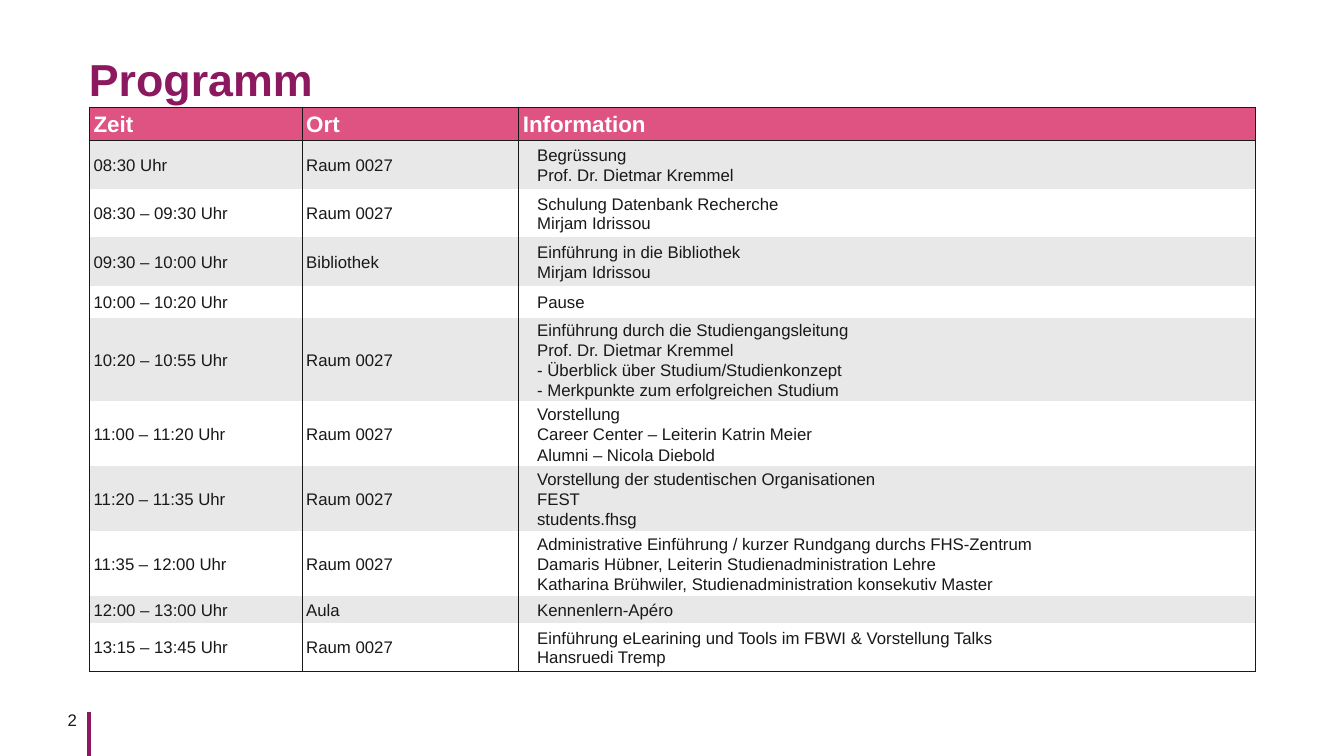
import copy
import pptx
import pptx.dml.color
import pptx.enum.shapes
import pptx.enum.text
import pptx.oxml
import pptx.oxml.ns
import pptx.util

Cm, Pt = pptx.util.Cm, pptx.util.Pt
ALIGN, ANCHOR = pptx.enum.text.PP_ALIGN, pptx.enum.text.MSO_ANCHOR
PLUM, PINK, INK, GREY, WHITE = "8C195F", "D72864", "191919", "E8E8E8", "FFFFFF"

HEADER = ("Zeit", "Ort", "Information")
COLUMNS = (5.36, 5.46, 18.57)
HEADER_HEIGHT = 0.84
HEIGHT_BY_LINES = {1: 0.69, 2: 1.22, 3: 1.63, 4: 2.11}
PROGRAMME = [
    ("08:30 Uhr", "Raum 0027", ["Begrüssung", "Prof. Dr. Dietmar Kremmel"]),
    ("08:30 – 09:30 Uhr", "Raum 0027", ["Schulung Datenbank Recherche", "Mirjam Idrissou"]),
    ("09:30 – 10:00 Uhr", "Bibliothek", ["Einführung in die Bibliothek", "Mirjam Idrissou"]),
    ("10:00 – 10:20 Uhr", "", ["Pause"]),
    ("10:20 – 10:55 Uhr", "Raum 0027", [
        "Einführung durch die Studiengangsleitung", "Prof. Dr. Dietmar Kremmel",
        "- Überblick über Studium/Studienkonzept", "- Merkpunkte zum erfolgreichen Studium"]),
    ("11:00 – 11:20 Uhr", "Raum 0027", [
        "Vorstellung", "Career Center – Leiterin Katrin Meier", "Alumni – Nicola Diebold"]),
    ("11:20 – 11:35 Uhr", "Raum 0027", [
        "Vorstellung der studentischen Organisationen", "FEST", "students.fhsg"]),
    ("11:35 – 12:00 Uhr", "Raum 0027", [
        "Administrative Einführung / kurzer Rundgang durchs FHS-Zentrum",
        "Damaris Hübner, Leiterin Studienadministration Lehre",
        "Katharina Brühwiler, Studienadministration konsekutiv Master"]),
    ("12:00 – 13:00 Uhr", "Aula", ["Kennenlern-Apéro"]),
    ("13:15 – 13:45 Uhr", "Raum 0027", [
        "Einführung eLearining und Tools im FBWI & Vorstellung Talks", "Hansruedi Tremp"]),
]


def rgb(color):
    return pptx.dml.color.RGBColor.from_string(color)


def write(tf, lines, size=12, color=INK, bold=False, align=ALIGN.LEFT, spacing=1.0, indent=0):
    p = tf.paragraphs[0]
    p.alignment, p.line_spacing = align, spacing
    if indent:
        p._p.get_or_add_pPr().set("marL", str(Cm(indent)))
    for i, line in enumerate(lines):
        if i:
            p.add_line_break()
            p._p[-1].append(copy.deepcopy(r._r.rPr))
        r = p.add_run()
        r.text = line
        r.font.name, r.font.size, r.font.bold = "Arial", Pt(size), bold
        r.font.color.rgb = rgb(color)


class Deck:
    """Holds the presentation, its current slide and the style of its elements."""

    def __init__(self, width, height):
        self.prs = pptx.Presentation()
        self.prs.slide_width, self.prs.slide_height = Cm(width), Cm(height)
        self.s = self.prs.slides.add_slide(self.prs.slide_layouts[5])

    def frame(self, sp, anchor, right=0):
        tf = sp.text_frame
        tf.word_wrap, tf.vertical_anchor = True, anchor
        tf.auto_size = pptx.enum.text.MSO_AUTO_SIZE.NONE
        tf.margin_left = tf.margin_top = tf.margin_bottom = 0
        tf.margin_right = Cm(right)
        return tf

    def title(self, text, x, y, w, h):
        sp = self.s.shapes.title
        sp.left, sp.top, sp.width, sp.height = Cm(x), Cm(y), Cm(w), Cm(h)
        write(self.frame(sp, ANCHOR.MIDDLE), [text], size=32, color=PLUM, bold=True, spacing=1.2)

    def page_number(self, text, x, y, w, h):
        sp = self.s.shapes.add_textbox(Cm(x), Cm(y), Cm(w), Cm(h))
        write(self.frame(sp, ANCHOR.TOP, right=0.3), [text], align=ALIGN.RIGHT, spacing=0.9)

    def line(self, x1, y1, x2, y2):
        sp = self.s.shapes.add_connector(
            pptx.enum.shapes.MSO_CONNECTOR.STRAIGHT, Cm(x1), Cm(y1), Cm(x2), Cm(y2))
        sp.line.color.rgb, sp.line.width = rgb(PLUM), Pt(3)
        sp._element.spPr.append(pptx.oxml.parse_xml(
            f"<a:effectLst {pptx.oxml.ns.nsdecls('a')}/>"))

    def cell(self, cell, fill, sides, alpha=None):
        cell.vertical_anchor = ANCHOR.MIDDLE
        cell.margin_left = cell.margin_right = Cm(0.1)
        cell.margin_top, cell.margin_bottom = Cm(0.03), 0
        tcPr = cell._tc.get_or_add_tcPr()
        for side in "LRTB":
            paint = (f'<a:solidFill><a:srgbClr val="{INK}"/></a:solidFill>'
                     if side in sides else "<a:noFill/>")
            tcPr.append(pptx.oxml.parse_xml(
                f'<a:ln{side} {pptx.oxml.ns.nsdecls("a")} w="{Pt(1)}">{paint}</a:ln{side}>'))
        cell.fill.solid()
        cell.fill.fore_color.rgb = rgb(fill)
        if alpha:
            clr = tcPr.find(pptx.oxml.ns.qn("a:solidFill"))[0]
            clr.append(pptx.oxml.parse_xml(
                f'<a:alpha {pptx.oxml.ns.nsdecls("a")} val="{alpha * 1000}"/>'))

    def programme(self, x, y):
        heights = [HEADER_HEIGHT] + [HEIGHT_BY_LINES[len(info)] for *_, info in PROGRAMME]
        table = self.s.shapes.add_table(
            len(heights), len(COLUMNS), Cm(x), Cm(y), Cm(sum(COLUMNS)), Cm(sum(heights))).table
        for column, width in zip(table.columns, COLUMNS):
            column.width = Cm(width)
        for row, height in zip(table.rows, heights):
            row.height = Cm(height)
        for j, text in enumerate(HEADER):
            cell = table.cell(0, j)
            self.cell(cell, PINK, "LRTB", alpha=80)
            write(cell.text_frame, [text], size=16, color=WHITE, bold=True, spacing=1.07)
        for i, (time, place, info) in enumerate(PROGRAMME, 1):
            sides = "LR" + "T" * (i == 1) + "B" * (i == len(PROGRAMME))
            for j, lines in enumerate(([time], [place] if place else [], info)):
                cell = table.cell(i, j)
                self.cell(cell, GREY if i % 2 else WHITE, sides)
                write(cell.text_frame, lines, spacing=1.07 if len(lines) > 2 else Pt(14),
                      indent=0.36 if j == 2 else 0)


def main():
    deck = Deck(33.88, 19.05)
    deck.line(2.24, 17.93, 2.24, 19.05)
    deck.page_number("2", 0.74, 17.93, 1.5, 0.51)
    deck.title("Programm", 2.24, 0.89, 30.71, 1.9)
    deck.programme(2.26, 2.7)
    deck.prs.save("out.pptx")


if __name__ == "__main__":
    main()
